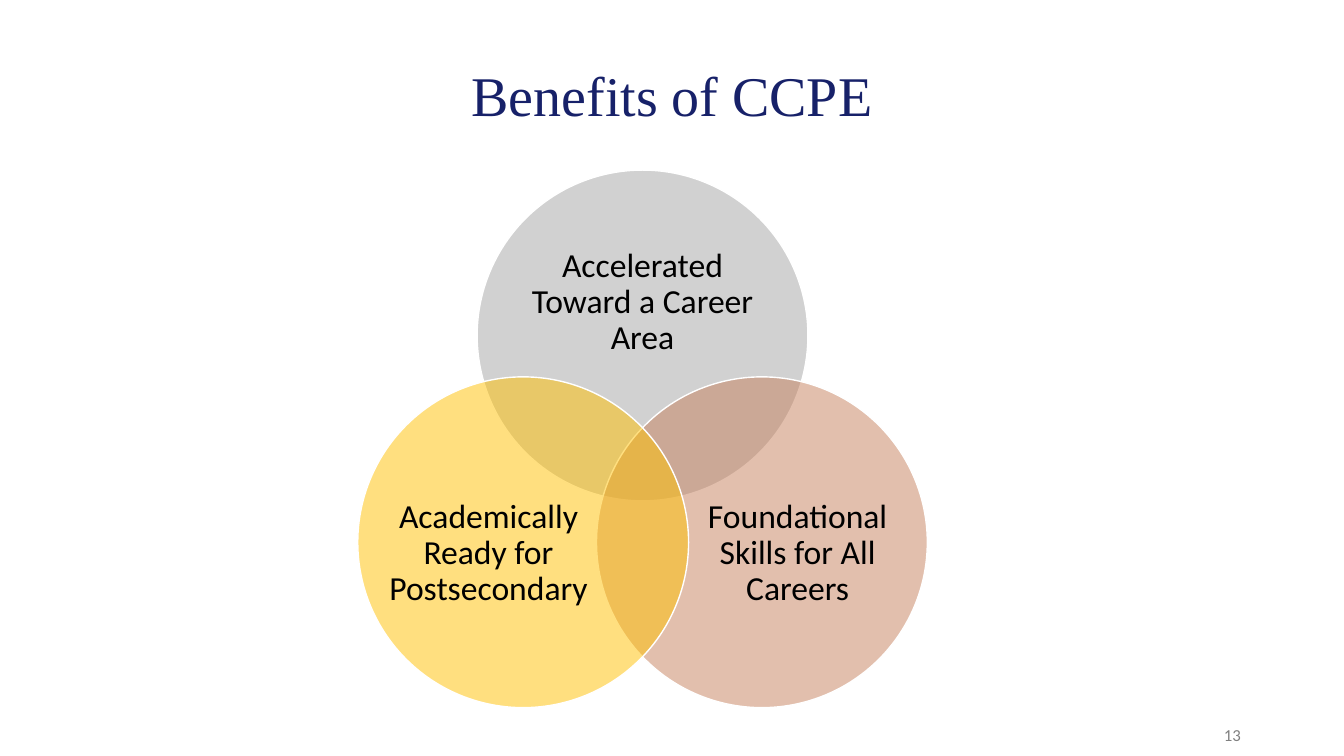
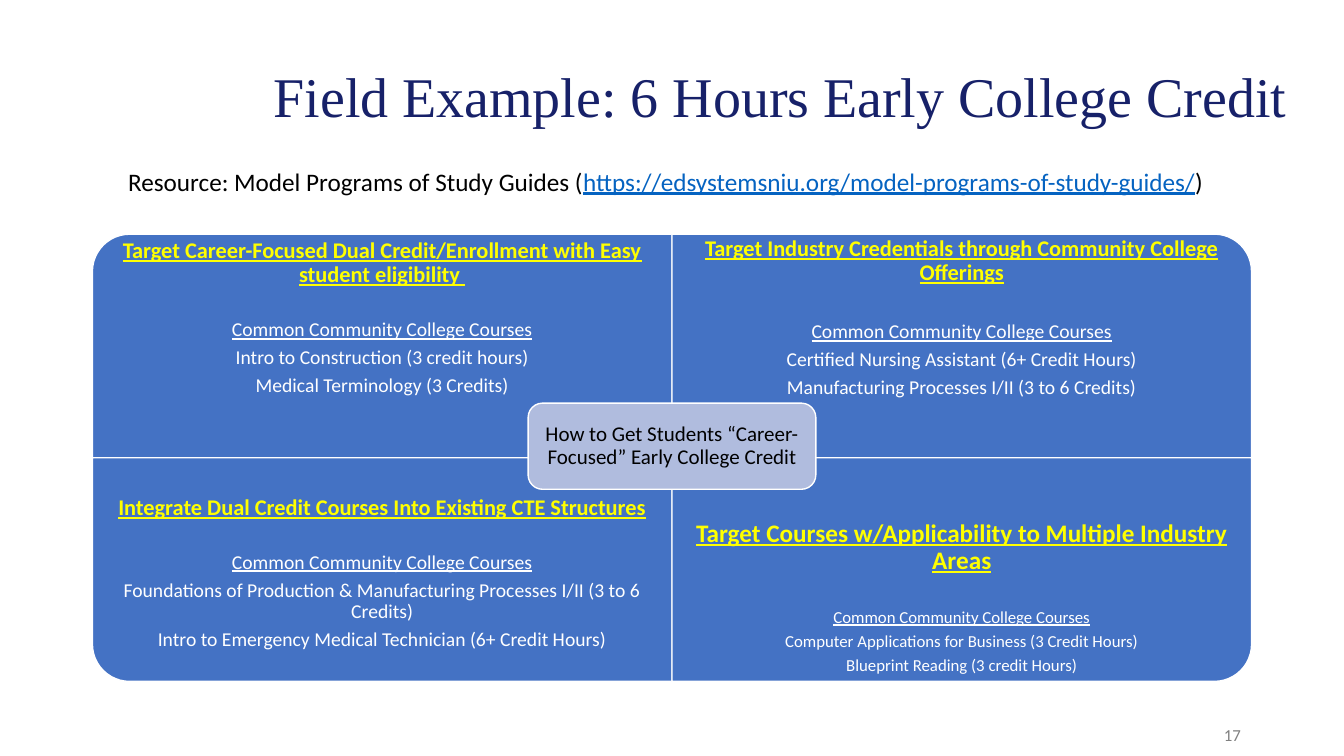
"""Build two slides on early college credit: a Venn diagram and a four-part matrix."""
import math

import pptx
import pptx.dml.color
import pptx.enum.shapes
import pptx.enum.text
import pptx.oxml
import pptx.oxml.ns
import pptx.util

SHAPE = pptx.enum.shapes.MSO_SHAPE
ALIGN = pptx.enum.text.PP_ALIGN
ANCHOR = pptx.enum.text.MSO_ANCHOR
Pt = pptx.util.Pt

PX = 9525
WIDTH, HEIGHT = 1280, 720
NAVY, BLUE, LAVENDER, LINK = "172169", "4472C4", "B0BCDE", "0563C1"
WHITE, BLACK, GREY, YELLOW = "FFFFFF", "000000", "808080", "FFFF00"

TITLE = {"name": "Times New Roman", "size": Pt(40), "color": NAVY}
PAGE = {"name": "Calibri", "size": Pt(12), "color": GREY}
RESOURCE = {"name": "Calibri", "size": Pt(18), "color": BLACK}
VENN = {"name": "Calibri", "size": Pt(24), "color": BLACK}
CENTRE = {"name": "Calibri", "size": Pt(15), "color": BLACK}
HEADING = {"name": "Calibri", "color": YELLOW, "bold": True, "underline": True}
COURSE = {"name": "Calibri", "color": WHITE}

CIRCLES = [
    (-90, "A5A5A5", (42, 55, 231, 142), "Accelerated Toward a Career Area"),
    (30, "C7815D", (97, 82, 189, 173), "Foundational Skills for All Careers"),
    (150, "FFC000", (30, 82, 189, 173), "Academically Ready for Postsecondary"),
]

QUADRANTS = [
    {"col": 0, "row": 0, "turn": 270, "sizes": (16, 14), "gap": 23, "inset": 12, "shift": 0,
     "heading": "Target Career-Focused Dual Credit/Enrollment with Easy student eligibility ",
     "courses": ["Intro to Construction (3 credit hours)",
                 "Medical Terminology (3 Credits)"]},
    {"col": 1, "row": 0, "turn": 0, "sizes": (16, 14), "gap": 26, "inset": 12, "shift": 0,
     "heading": "Target Industry Credentials through Community College Offerings",
     "courses": ["Certified Nursing Assistant (6+ Credit Hours)",
                 "Manufacturing Processes I/II (3 to 6 Credits)"]},
    {"col": 0, "row": 1, "turn": 180, "sizes": (16, 14), "gap": 23, "inset": 12, "shift": -23,
     "heading": "Integrate Dual Credit Courses Into Existing CTE Structures",
     "courses": ["Foundations of Production & Manufacturing Processes I/II (3 to 6 Credits)",
                 "Intro to Emergency Medical Technician (6+ Credit Hours)"]},
    {"col": 1, "row": 1, "turn": 90, "sizes": (18, 12), "gap": 24, "inset": 13, "shift": 0,
     "heading": "Target Courses w/Applicability to Multiple Industry Areas",
     "courses": ["Computer Applications for Business (3 Credit Hours)",
                 "Blueprint Reading (3 credit Hours)"]},
]


def emu(box):
    """Turn px lengths into EMU."""
    return [round(v * PX) for v in box]


def rgb(value):
    """Turn a hex string into a colour."""
    return pptx.dml.color.RGBColor.from_string(value)


def apply(obj, values):
    """Set each attribute named in a dict of format values."""
    for key, value in values.items():
        if key == "color":
            obj.color.rgb = rgb(value)
        else:
            setattr(obj, key, value)


def add_runs(p, runs, **layout):
    """Fill a paragraph with (text, font) runs and lay it out."""
    apply(p, layout)
    for text, font in runs:
        r = p.add_run()
        r.text = text
        apply(r.font, font)


def set_frame(tf, inset=(10, 5), anchor=ANCHOR.MIDDLE):
    """Set wrapping, anchor and horizontal and vertical insets of a text frame."""
    x, y = emu(inset)
    apply(tf, {"word_wrap": True, "auto_size": pptx.enum.text.MSO_AUTO_SIZE.NONE,
               "vertical_anchor": anchor, "margin_left": x, "margin_right": x,
               "margin_top": y, "margin_bottom": y})
    return tf


def add_text(s, box, runs, inset=(10, 5), anchor=ANCHOR.MIDDLE, **layout):
    """Add a text box with one paragraph and return its frame."""
    tf = set_frame(s.shapes.add_textbox(*emu(box)).text_frame, inset, anchor)
    add_runs(tf.paragraphs[0], runs, **layout)
    return tf


def add_shape(s, kind, box, color, opacity=100):
    """Add a filled shape with a thin white outline."""
    sp = s.shapes.add_shape(kind, *emu(box))
    sp.shadow.inherit = False
    sp.fill.solid()
    sp.fill.fore_color.rgb = rgb(color)
    if opacity < 100:
        clr = sp._element.spPr.find(".//" + pptx.oxml.ns.qn("a:srgbClr"))
        alpha = pptx.oxml.parse_xml("<a:alpha %s val='%d'/>" % (
            pptx.oxml.ns.nsdecls("a"), opacity * 1000))
        clr.append(alpha)
    apply(sp.line, {"color": WHITE, "width": Pt(1)})
    return sp


def add_slide(prs, title, box, number):
    """Add a slide with the shared title style and page number."""
    s = prs.slides.add_slide(prs.slide_layouts.get_by_name("Title Only"))
    sp = s.shapes.title
    sp.left, sp.top, sp.width, sp.height = emu(box)
    add_runs(set_frame(sp.text_frame).paragraphs[0], [(title, TITLE)],
             alignment=ALIGN.CENTER, line_spacing=0.9)
    add_text(s, (904, 681, 288, 38), [(str(number), PAGE)], alignment=ALIGN.RIGHT)
    return s


def add_venn(s, box):
    """Place three overlapping circles around the middle of a box."""
    x, y, w, h = box
    orbit = h / 3.9
    radius = 1.2 * orbit
    for angle, color, (dx, dy, tw, th), text in CIRCLES:
        a = math.radians(angle)
        left = x + w / 2 + orbit * math.cos(a) - radius
        top = y + radius + orbit * (1 + math.sin(a)) - radius
        add_shape(s, SHAPE.OVAL, (left, top, 2 * radius, 2 * radius), color, 50)
        add_text(s, (left + dx, top + dy, tw, th), [(text, VENN)], (0, 0),
                 alignment=ALIGN.CENTER, line_spacing=0.9, space_after=Pt(8.4))


def add_quadrant(s, box, q):
    """Place one panel, its rounded corner turned outwards, and its text."""
    x, y, w, h = box
    pw, ph = (h, w) if q["turn"] % 180 else (w, h)
    sp = add_shape(s, SHAPE.ROUND_1_RECTANGLE,
                   (x + (w - pw) / 2, y + (h - ph) / 2, pw, ph), BLUE)
    sp.rotation = q["turn"]
    big, small = q["sizes"]
    text_top = y + q["row"] * h / 4 + q["shift"]
    tf = add_text(s, (x, text_top, w, h * 3 / 4),
                  [(q["heading"], {**HEADING, "size": Pt(big)})], (q["inset"],) * 2,
                  alignment=ALIGN.CENTER, line_spacing=0.9, space_after=Pt(q["gap"]))
    font = {**COURSE, "size": Pt(small)}
    lines = [("Common Community College Courses", {**font, "underline": True})]
    lines += [(course, font) for course in q["courses"]]
    for line in lines:
        add_runs(tf.add_paragraph(), [line], alignment=ALIGN.CENTER,
                 line_spacing=0.9, space_after=Pt(0.35 * small))


def add_matrix(s, box):
    """Place four panels in a grid with a label over the crossing."""
    x, y, w, h = box
    for q in QUADRANTS:
        cell = (x + q["col"] * w / 2, y + q["row"] * h / 2, w / 2, h / 2)
        add_quadrant(s, cell, q)
    sp = add_shape(s, SHAPE.ROUNDED_RECTANGLE,
                   (x + w / 2 - 137, y + h / 2 - 52, 274, 82), LAVENDER)
    add_runs(set_frame(sp.text_frame, (10, 10)).paragraphs[0],
             [("How to Get Students “Career-Focused” Early College Credit", CENTRE)],
             alignment=ALIGN.CENTER, line_spacing=0.9)


def main():
    """Build and save the slides."""
    prs = pptx.Presentation()
    prs.slide_width, prs.slide_height = emu((WIDTH, HEIGHT))

    s = add_slide(prs, "Benefits of CCPE", (240, 64, 800, 59), 13)
    add_venn(s, (341, 162, 542, 512))

    s = add_slide(prs, "Field Example: 6 Hours Early College Credit", (232, 65, 1022, 59), 17)
    add_matrix(s, (88, 223, 1104, 426))
    add_text(s, (112, 153, 1080, 38), [
        ("Resource: Model Programs of Study Guides (", RESOURCE),
        ("https://edsystemsniu.org/model-programs-of-study-guides/",
         {**RESOURCE, "color": LINK, "underline": True}),
        (")", RESOURCE)], anchor=ANCHOR.TOP)

    prs.save("out.pptx")


if __name__ == "__main__":
    main()
